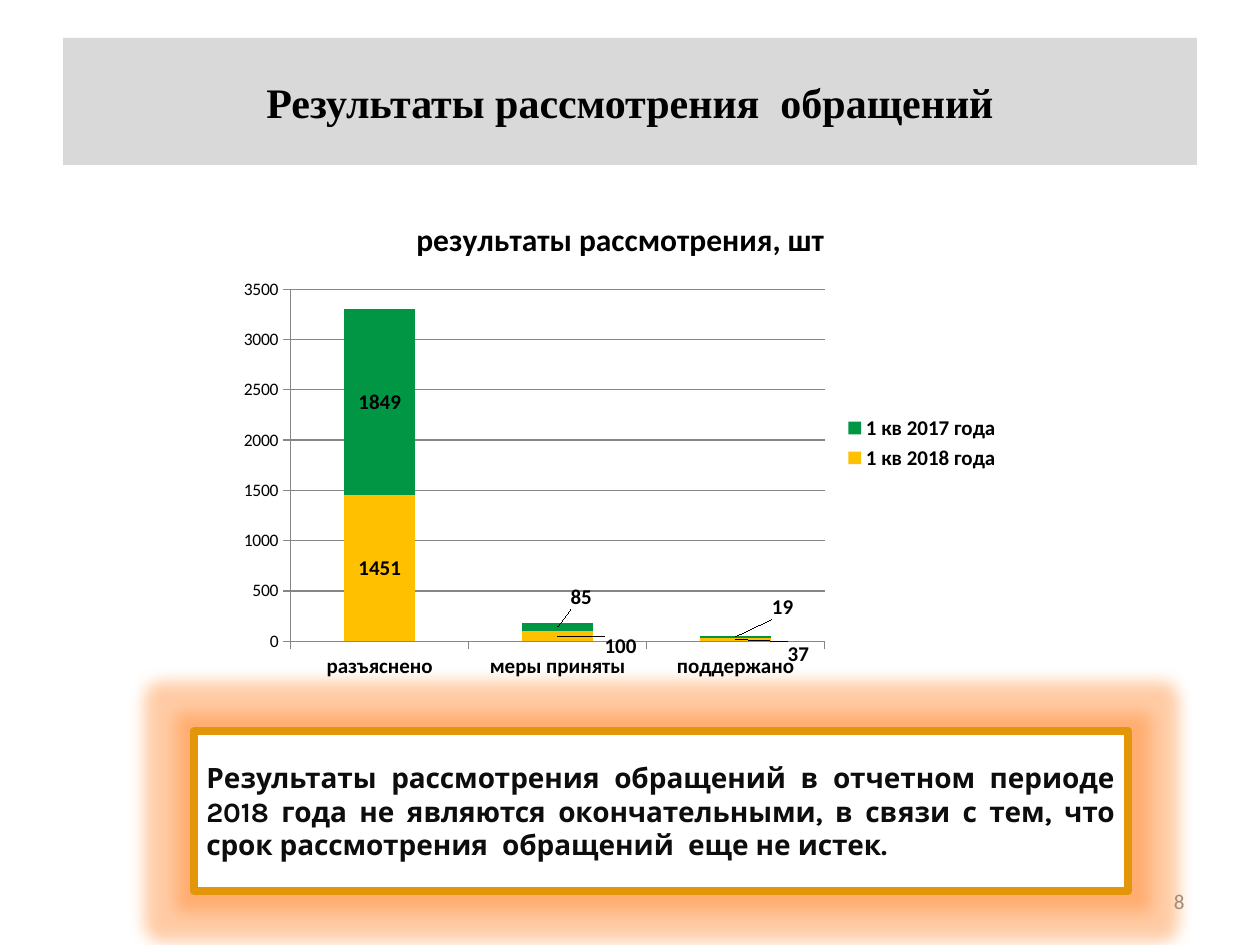
from dataclasses import dataclass

from lxml.etree import SubElement, fromstring
from pptx import Presentation
from pptx.chart.data import CategoryChartData
from pptx.dml.color import RGBColor
from pptx.enum.chart import XL_CHART_TYPE as ChartType, XL_LEGEND_POSITION as LegendPosition
from pptx.enum.chart import XL_TICK_MARK as TickMark
from pptx.enum.shapes import MSO_SHAPE as Shape
from pptx.enum.text import MSO_ANCHOR as Anchor, PP_ALIGN as Align
from pptx.oxml.ns import qn
from pptx.slide import Slide
from pptx.util import Emu, Pt

PX_PER_INCH = 126


def px(length):
    return Emu(round(length * 914400 / PX_PER_INCH))


def rgb(value):
    return RGBColor.from_string(value)


def set_font(font, name, size, color, bold=False):
    font.name, font.size, font.bold = name, Pt(size), bold
    font.color.rgb = rgb(color)


def manual_layout(**values):
    layout = fromstring(
        '<c:layout xmlns:c="http://schemas.openxmlformats.org/drawingml/2006/chart"/>')
    manual = SubElement(layout, qn("c:manualLayout"))
    for tag, value in values.items():
        SubElement(manual, qn(f"c:{tag}")).set("val", str(value))
    return layout


@dataclass
class SlideBuilder:
    slide: Slide
    heading_font: str = "Times New Roman"
    note_font: str = "Karla"
    base_font: str = "Calibri"
    ink: str = "000000"
    grid: str = "868686"

    def place(self, shape, box):
        shape.left, shape.top, shape.width, shape.height = map(px, box)

    def set_text(self, shape, text, align, font, size, color, bold=False):
        frame = shape.text_frame
        frame.word_wrap = True
        frame.vertical_anchor = Anchor.MIDDLE
        paragraph = frame.paragraphs[0]
        paragraph.text = text
        paragraph.alignment = align
        set_font(paragraph.font, font, size, color, bold)
        return paragraph

    def title(self, text, box, fill):
        heading = self.slide.shapes.title
        self.place(heading, box)
        heading.fill.solid()
        heading.fill.fore_color.rgb = rgb(fill)
        self.set_text(heading, text, Align.CENTER, self.heading_font, 24, self.ink, True)

    def page_number(self, text, box):
        number = self.slide.shapes.add_textbox(*map(px, box))
        self.set_text(number, text, Align.RIGHT, self.base_font, 12, "8C8C8C")

    def glowing_note(self, text, box, border, glow_color):
        note = self.slide.shapes.add_shape(Shape.RECTANGLE, *map(px, box))
        note.shadow.inherit = False
        note.fill.solid()
        note.fill.fore_color.rgb = rgb("FFFFFF")
        note.line.color.rgb = rgb(border)
        note.line.width = Pt(4.5)
        effects = note._element.spPr.find(qn("a:effectLst"))
        glow = SubElement(effects, qn("a:glow"), rad=str(int(Pt(18))))
        color = SubElement(glow, qn("a:srgbClr"), val=glow_color)
        SubElement(color, qn("a:alpha"), val="40000")
        paragraph = self.set_text(note, text, Align.JUSTIFY, self.note_font, 16, "0D0D0D", True)
        paragraph.space_after = Pt(6)

    def axis(self, axis, size, bold):
        set_font(axis.tick_labels.font, self.base_font, size, self.ink, bold)
        axis.major_tick_mark = TickMark.OUTSIDE
        axis.minor_tick_mark = TickMark.NONE
        axis.format.line.color.rgb = rgb(self.grid)

    def stacked_columns(self, title, box, categories, series, plot_area):
        data = CategoryChartData()
        data.categories = categories
        for name, values, _, _ in series:
            data.add_series(name, values)
        chart = self.slide.shapes.add_chart(
            ChartType.COLUMN_STACKED, *map(px, box), data).chart
        set_font(chart.font, self.base_font, 10, self.ink)

        chart.has_title = True
        heading = chart.chart_title.text_frame.paragraphs[0]
        heading.text = title
        set_font(heading.font, self.base_font, 18, self.ink, True)
        chart.chart_title.include_in_layout = False

        chart.has_legend = True
        chart.legend.position = LegendPosition.RIGHT
        chart.legend.include_in_layout = False
        set_font(chart.legend.font, self.base_font, 12, self.ink, True)

        self.axis(chart.category_axis, 12, True)
        self.axis(chart.value_axis, 10, False)
        chart.value_axis.maximum_scale = 3500
        chart.value_axis.major_unit = 500
        chart.value_axis.has_major_gridlines = True
        chart.value_axis.major_gridlines.format.line.color.rgb = rgb(self.grid)

        plot = chart.plots[0]
        plot.gap_width, plot.overlap = 150, 100
        plot.vary_by_categories = False
        for column, (_, _, color, label_shifts) in zip(plot.series, series):
            self.column_series(column, color, label_shifts)

        area = chart._chartSpace.chart.plotArea
        for layout in area.findall(qn("c:layout")):
            area.remove(layout)
        x, y, w, h = plot_area
        area.insert(0, manual_layout(
            layoutTarget="inner", xMode="edge", yMode="edge", x=x, y=y, w=w, h=h))

    def column_series(self, column, color, label_shifts):
        column.format.fill.solid()
        column.format.fill.fore_color.rgb = rgb(color)
        column.invert_if_negative = False
        labels = column.data_labels
        labels.show_value = True
        set_font(labels.font, self.base_font, 12, self.ink, True)
        for index, (x, y) in label_shifts.items():
            set_font(column.points[index].data_label.font, self.base_font, 12, self.ink, True)
            label = column._element.xpath(f'c:dLbls/c:dLbl[c:idx/@val="{index}"]')[0]
            label.insert(1, manual_layout(x=x, y=y))


def main():
    deck = Presentation()
    deck.slide_width, deck.slide_height = px(1260), px(945)
    builder = SlideBuilder(deck.slides.add_slide(deck.slide_layouts[5]))

    builder.page_number("8", (903, 876, 294, 50))
    builder.title("Результаты рассмотрения  обращений", (63, 38, 1134, 127), "D9D9D9")
    builder.glowing_note(
        "Результаты рассмотрения обращений в отчетном периоде 2018 года не являются "
        "окончательными, в связи с тем, что срок рассмотрения  обращений  еще не истек.",
        (194, 731, 934, 160), "E4960A", "FF8021")
    builder.stacked_columns(
        "результаты рассмотрения, шт", (228, 195, 785, 496),
        ["разъяснено", "меры приняты", "поддержано"],
        [("1 кв 2018 года", (1451, 100, 37), "FFC000", {1: (0.08, 0.02), 2: (0.08, 0.03)}),
         ("1 кв 2017 года", (1849, 85, 19), "009644", {1: (0.03, -0.06), 2: (0.06, -0.06)})],
        (0.08, 0.19, 0.68, 0.71))
    deck.save("out.pptx")


if __name__ == "__main__":
    main()
